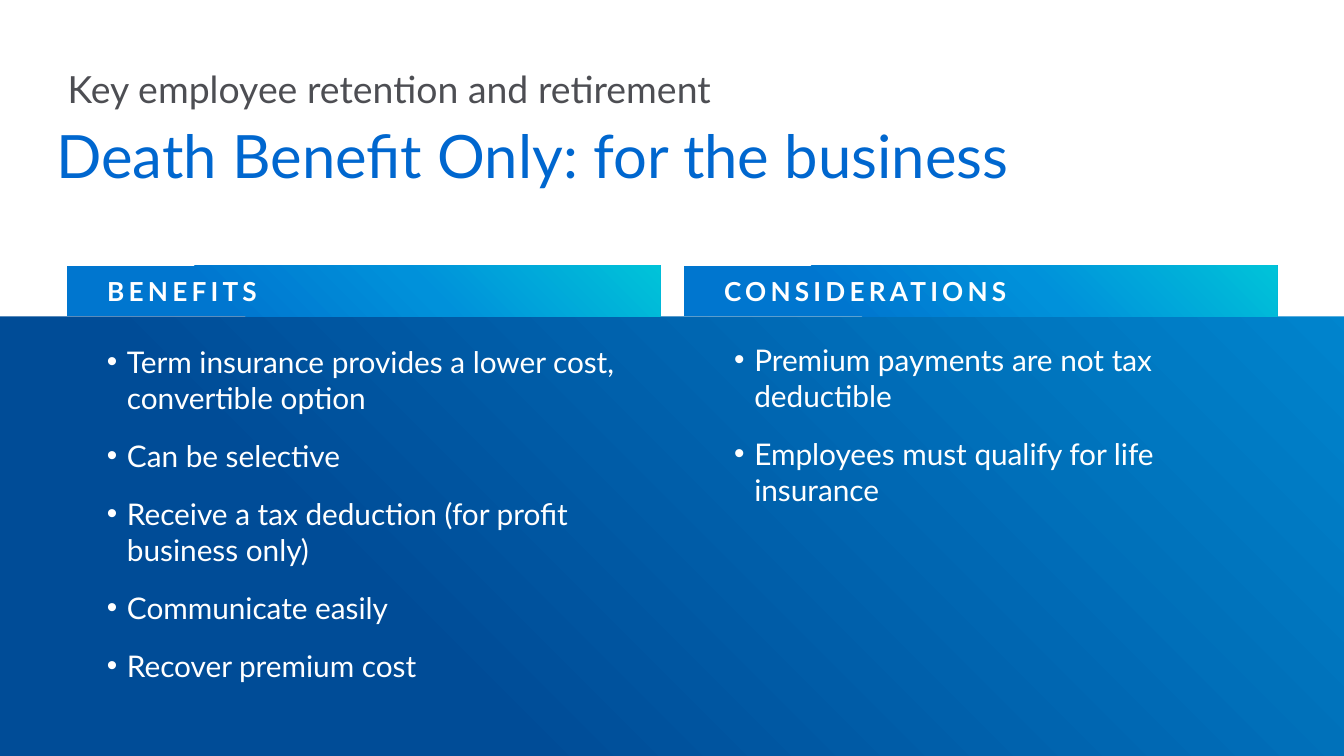
import copy

import pptx
import pptx.dml.color
import pptx.enum.shapes
import pptx.enum.text
import pptx.oxml.ns
import pptx.util

Pt = pptx.util.Pt
RGBColor = pptx.dml.color.RGBColor
Anchor = pptx.enum.text.MSO_ANCHOR

WHITE = RGBColor(0xFF, 0xFF, 0xFF)
NAVY = RGBColor(0x00, 0x4C, 0x97)
TITLE_BLUE = RGBColor(0x00, 0x67, 0xCF)
BLUE = RGBColor(0x00, 0x76, 0xCF)
SKY = RGBColor(0x00, 0x91, 0xDA)
TURQUOISE = RGBColor(0x00, 0xC3, 0xD9)
GREY = RGBColor(0x4D, 0x4E, 0x53)

FONT = "Lato"
PAGE_WIDTH, PAGE_HEIGHT = 960, 540
HEADER_HEIGHT = 226
BAR_HEIGHT = 36
BULLET_INDENT = 14.4

BENEFITS = [
    "Term insurance provides a lower cost, convertible option",
    "Can be selective",
    "Receive a tax deduction (for profit business only)",
    "Communicate easily",
    "Recover premium cost",
]
CONSIDERATIONS = [
    "Premium payments are not tax deductible",
    "Employees must qualify for life insurance",
]


def place(shape, box):
    shape.left, shape.top, shape.width, shape.height = (Pt(length) for length in box)


def write_text(shape, lines, size, color, bold=False, tracking=0, gap=0,
               bullet=False, anchor=Anchor.TOP, insets=(0, 0, 0, 0)):
    frame = shape.text_frame
    frame.word_wrap = True
    frame.auto_size = pptx.enum.text.MSO_AUTO_SIZE.NONE
    frame.vertical_anchor = anchor
    (frame.margin_left, frame.margin_top,
     frame.margin_right, frame.margin_bottom) = (Pt(inset) for inset in insets)
    for index, line in enumerate(lines):
        para = frame.paragraphs[0] if index == 0 else frame.add_paragraph()
        para.alignment = pptx.enum.text.PP_ALIGN.LEFT
        para.space_before = Pt(gap if index else 0)
        if bullet:
            properties = para._p.get_or_add_pPr()
            properties.set("marL", str(Pt(BULLET_INDENT)))
            properties.set("indent", str(-Pt(BULLET_INDENT)))
            mark = pptx.oxml.parse_xml(
                f'<a:buChar {pptx.oxml.ns.nsdecls("a")} char="•"/>')
            properties.append(mark)
        span = para.add_run()
        span.text = line
        span.font.name = FONT
        span.font.size = Pt(size)
        span.font.bold = bold
        span.font.color.rgb = color
        if tracking:
            span.font._element.set("spc", str(tracking * 100))


def add_panel(page, box, stops):
    """Draw a rectangle, solid for one stop and graded to the upper right for more."""
    panel = page.shapes.add_shape(
        pptx.enum.shapes.MSO_SHAPE.RECTANGLE, *(Pt(length) for length in box))
    panel.shadow.inherit = False
    panel.line.fill.background()
    if len(stops) == 1:
        panel.fill.solid()
        panel.fill.fore_color.rgb = stops[0][1]
        return panel
    panel.fill.gradient()
    panel.fill.gradient_angle = 45
    stop_list = panel._element.spPr.find(".//" + pptx.oxml.ns.qn("a:gsLst"))
    while len(stop_list) < len(stops):
        stop_list.append(copy.deepcopy(stop_list[-1]))
    for stop, (position, color) in zip(panel.fill.gradient_stops, stops):
        stop.position = position
        stop.color.rgb = color
    return panel


def add_backdrop(page, box):
    left, top, width, height = box
    graded = add_panel(page, box, [(0.25, NAVY), (0.99, SKY)])
    header = add_panel(page, (left, top, width, HEADER_HEIGHT), [(0, WHITE)])
    # Send both behind the placeholders
    for depth, panel in enumerate((graded, header), start=2):
        page.shapes._spTree.insert(depth, panel._element)


def add_heading(page, box, subject, title):
    left, top, width, height = box
    subject_box = page.shapes.add_textbox(
        Pt(left + 8), Pt(top), Pt(width), Pt(34.5))
    write_text(subject_box, [subject], 26.7, GREY)
    place(page.shapes.title, (left, top + 37.5, width, height - 37.5))
    write_text(page.shapes.title, [title], 42.7, TITLE_BLUE)


def add_column(page, box, heading, body, body_box, items):
    """Place a heading bar on top of the box and a list at an offset within it."""
    left, top, width = box
    bar = add_panel(page, (left, top, width, BAR_HEIGHT),
                    [(0.25, BLUE), (0.6, SKY), (1, TURQUOISE)])
    write_text(bar, [heading], 18.7, WHITE, bold=True, tracking=3,
               anchor=Anchor.MIDDLE, insets=(28.8, 5, 9.4, 5))
    shift_x, shift_y, body_width, body_height = body_box
    place(body, (left + shift_x, top + shift_y, body_width, body_height))
    write_text(body, items, 21.3, WHITE, gap=16, bullet=True)


def main():
    deck = pptx.Presentation()
    deck.slide_width, deck.slide_height = Pt(PAGE_WIDTH), Pt(PAGE_HEIGHT)
    page = deck.slides.add_slide(deck.slide_layouts.get_by_name("Two Content"))
    title, left_body, right_body = page.placeholders

    add_backdrop(page, (0, 0, PAGE_WIDTH, PAGE_HEIGHT))
    add_heading(page, (40.3, 47.5, 864, 122.5),
                "Key employee retention and retirement",
                "Death Benefit Only: for the business")

    # Two columns sit on the lower edge of the white header
    bar_top = HEADER_HEIGHT - BAR_HEIGHT
    add_column(page, (47.8, bar_top, 424), "BENEFITS",
               left_body, (28.5, 55.5, 412, 196.5), BENEFITS)
    add_column(page, (488.4, bar_top, 424), "CONSIDERATIONS",
               right_body, (36, 54, 388, 196.5), CONSIDERATIONS)
    deck.save("out.pptx")


if __name__ == "__main__":
    main()
